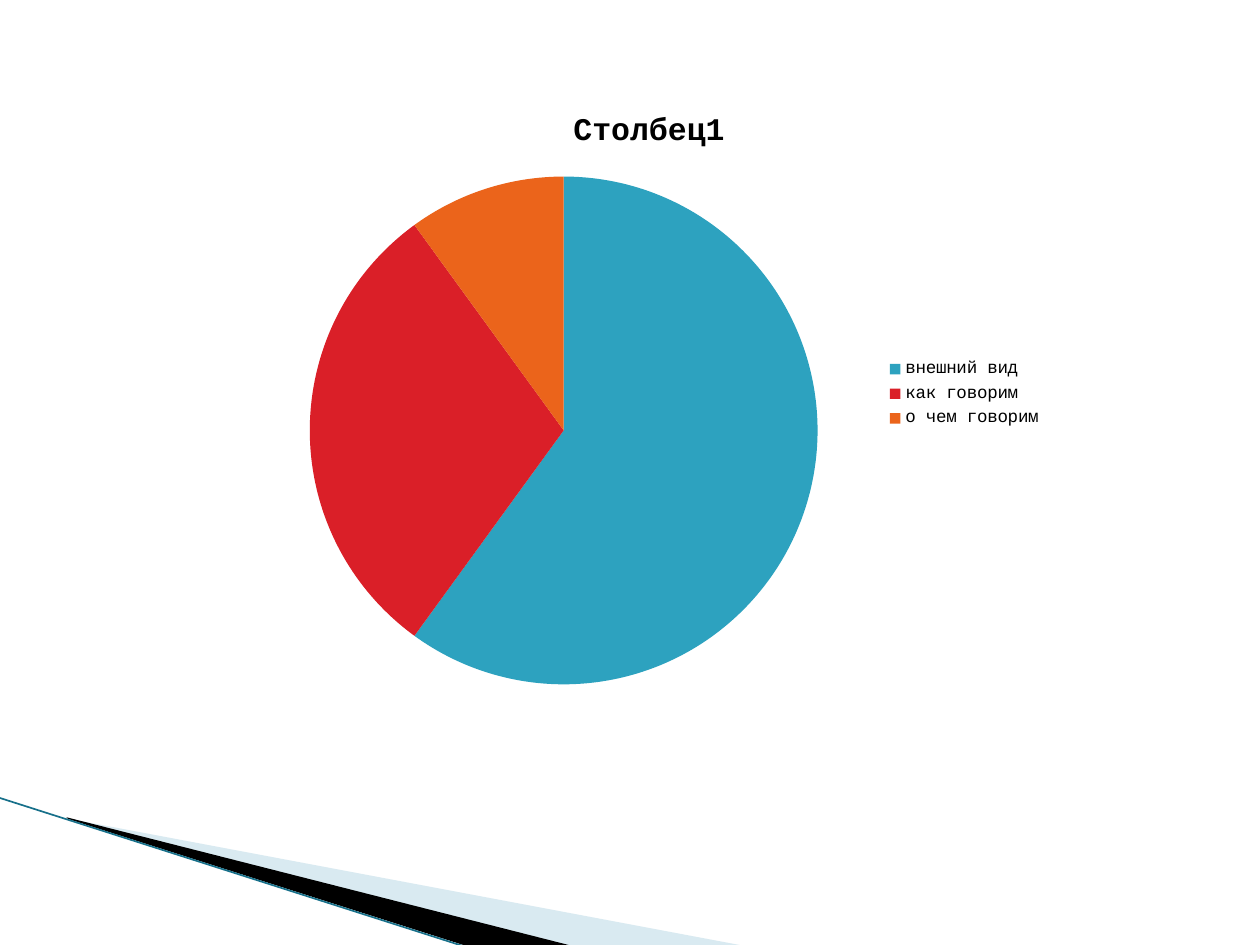
from pptx import Presentation
from pptx.chart import data as cd
from pptx.dml.color import RGBColor
from pptx.enum import chart as ec, shapes as es
from pptx.oxml.ns import qn
from pptx.util import Pt
from lxml import etree

# Content
FONT = "Courier New"
TITLE = "Столбец1"
PARTS = [("внешний вид", 60, "teal"), ("как говорим", 30, "red"),
         ("о чем говорим", 10, "orange")]
HEX = {"teal": "2DA2BF", "red": "DA1F28", "orange": "EB641B",
       "black": "000000", "pale": "A0CBDC", "edge": "17708A"}
# Corner wedges: points, colour, opacity in percent
WEDGES = [
    ([(39.6, 468.5), (428.4, 540.6), (328.4, 540.6), (39.6, 468)], "pale", 40),
    ([(38.2, 467.3), (329, 540.6), (267.8, 541.3), (38.9, 468)], "black", 100),
]
EDGE = (-0.7, 455.8, 267.1, 541.4)
CHART = (139, 49, 463.7, 352)


def paint(fill, name):
    fill.solid()
    fill.fore_color.rgb = RGBColor.from_string(HEX[name])


def style(font, size, bold):
    font.name, font.size, font.bold = FONT, Pt(size), bold
    paint(font.fill, "black")


prs = Presentation()
prs.slide_width, prs.slide_height = Pt(720), Pt(540)
slide = prs.slides.add_slide(prs.slide_layouts[6])

# Corner wedges
for pts, name, alpha in WEDGES:
    pen = slide.shapes.build_freeform(*pts[0], scale=Pt(1))
    pen.add_line_segments(pts[1:], close=True)
    wedge = pen.convert_to_shape()
    wedge.shadow.inherit = False
    wedge.line.fill.background()
    paint(wedge.fill, name)
    if alpha < 100:
        clr = wedge.fill._xPr.find(".//" + qn("a:srgbClr"))
        etree.SubElement(clr, qn("a:alpha")).set("val", str(alpha * 1000))

# Edge line
edge = slide.shapes.add_connector(es.MSO_CONNECTOR.STRAIGHT, *map(Pt, EDGE))
edge.line.width = Pt(0.95)
paint(edge.line.fill, "edge")
etree.SubElement(edge._element.spPr, qn("a:effectLst"))

# Pie chart
data = cd.CategoryChartData()
data.categories = [part[0] for part in PARTS]
data.add_series(TITLE, [part[1] for part in PARTS])
chart = slide.shapes.add_chart(ec.XL_CHART_TYPE.PIE, *map(Pt, CHART), data).chart
style(chart.font, 10, False)
chart.has_title = True
chart.chart_title.text_frame.text = TITLE
style(chart.chart_title.text_frame.paragraphs[0].runs[0].font, 18, True)
chart.has_legend = True
chart.legend.position = ec.XL_LEGEND_POSITION.RIGHT
chart.legend.include_in_layout = False
plot = chart.plots[0]
plot.vary_by_categories = True
for i, part in enumerate(PARTS):
    paint(plot.series[0].points[i].format.fill, part[2])

prs.save("out.pptx")
